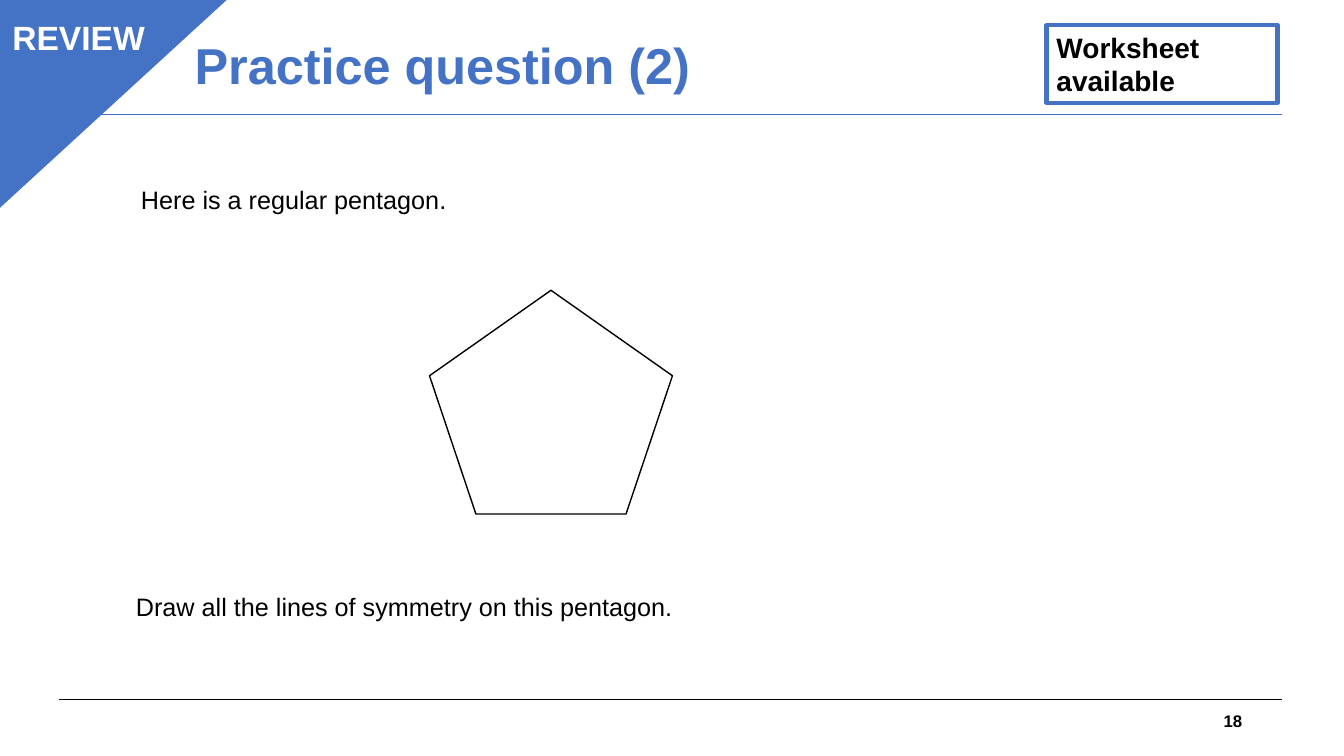
from pptx import Presentation
from pptx.dml.color import RGBColor
from pptx.enum.shapes import MSO_CONNECTOR as Link, MSO_SHAPE as Kind
from pptx.enum.text import MSO_ANCHOR as Anchor, PP_ALIGN as Align
from pptx.oxml.ns import qn
from pptx.util import Inches, Pt
from lxml.etree import SubElement

BLUE, BLACK, WHITE = "4472C4", "000000", "FFFFFF"


def color(code):
    return RGBColor.from_string(code)


class Board:
    """Holds the text style and the current slide, and draws its elements."""

    font = "Arial"

    def __init__(self, deck):
        self.slide = deck.slides.add_slide(deck.slide_layouts[5])
        self.shapes = self.slide.shapes

    def fill_text(self, shape, text, size, ink=BLACK, bold=True,
                  align=Align.LEFT, anchor=Anchor.TOP, wrap=True):
        frame = shape.text_frame
        frame.text = text
        frame.word_wrap = wrap
        frame.vertical_anchor = anchor
        for para in frame.paragraphs:
            para.alignment = align
            for run in para.runs:
                font = run.font
                font.name, font.size, font.bold = self.font, Pt(size), bold
                font.color.rgb = color(ink)

    def title(self, text, box):
        shape = self.shapes.title
        shape.left, shape.top, shape.width, shape.height = map(Inches, box)
        self.fill_text(shape, text, 36, BLUE, anchor=Anchor.MIDDLE)
        shape.text_frame.paragraphs[0].line_spacing = 0.9

    def text(self, text, box, size=18, **style):
        shape = self.shapes.add_textbox(*map(Inches, box))
        self.fill_text(shape, text, size, **style)

    def rule(self, y, ink):
        ends = map(Inches, (0.59, y, 12.72, y))
        line = self.shapes.add_connector(Link.STRAIGHT, *ends)
        line.line.color.rgb = color(ink)
        line.line.width = Pt(0.75)
        SubElement(line.element.spPr, qn("a:effectLst"))

    def shape(self, kind, box, edge, width, fill=None):
        shape = self.shapes.add_shape(kind, *map(Inches, box))
        shape.shadow.inherit = False
        if fill:
            shape.fill.solid()
            shape.fill.fore_color.rgb = color(fill)
        else:
            shape.fill.background()
        shape.line.color.rgb = color(edge)
        shape.line.width = Pt(width)
        return shape

    def corner(self, box):
        shape = self.shape(Kind.ISOSCELES_TRIANGLE, box, BLUE, 1, BLUE)
        shape.adjustments[0] = 0
        shape.element.spPr.find(qn("a:xfrm")).set("flipV", "1")

    def label(self, text, box, size, width, fill=None, **style):
        shape = self.shape(Kind.RECTANGLE, box, BLUE, width, fill)
        self.fill_text(shape, text, size, **style)


def main():
    deck = Presentation()
    deck.slide_width, deck.slide_height = Inches(13.33), Inches(7.5)
    board = Board(deck)
    board.rule(6.94, BLACK)
    board.rule(1.14, BLUE)
    board.title("Practice question (2)", (1.83, 0.12, 10, 1.11))
    board.text("18", (9.42, 6.95, 3, 0.4), 12,
               align=Align.RIGHT, anchor=Anchor.MIDDLE)
    board.corner((-0.03, -0.02, 2.29, 2.1))
    board.label("REVIEW", (0.01, 0.12, 1.54, 0.5), 24, 0.75, BLUE,
                ink=WHITE, align=Align.CENTER)
    board.label("Worksheet\vavailable", (10.38, 0.25, 2.29, 0.77), 20, 3)
    board.text("Here is a regular pentagon.", (1.3, 1.78, 3.26, 0.4),
               bold=False, wrap=False)
    board.shape(Kind.REGULAR_PENTAGON, (4.26, 2.88, 2.41, 2.22), BLACK, 1)
    board.text("Draw all the lines of symmetry on this pentagon.",
               (1.25, 5.82, 10.67, 0.4), bold=False)
    deck.save("out.pptx")


if __name__ == "__main__":
    main()
